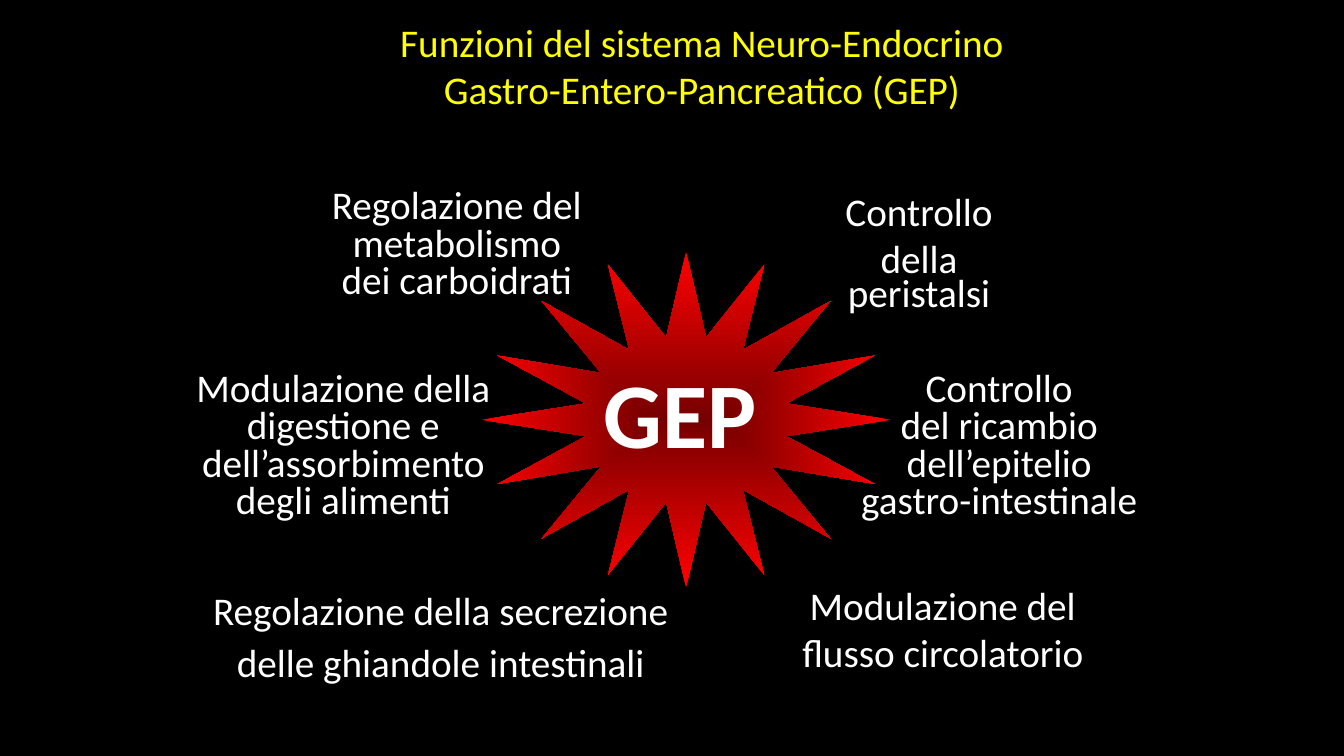
from dataclasses import dataclass

from pptx import Presentation
from pptx.dml.color import RGBColor
from pptx.enum.shapes import MSO_SHAPE
from pptx.enum.text import MSO_AUTO_SIZE, PP_ALIGN
from pptx.oxml import parse_xml
from pptx.oxml.ns import nsdecls, qn
from pptx.util import Inches, Pt


@dataclass(frozen=True)
class Theme:
    font: str = "Calibri"
    back: str = "000000"
    text: str = "FFFFFF"
    title: str = "FFFF00"
    core: str = "760000"
    edge: str = "FF0000"
    body: int = 28
    hub: int = 66


THEME = Theme()


def color(code):
    return RGBColor.from_string(code)


def add_text(slide, box, text, size=THEME.body, ink=THEME.text,
             bold=False, wrap=False, fill=None, gaps=None):
    """Centred text, one paragraph per line; gaps gives line spacings."""
    shape = slide.shapes.add_textbox(*map(Inches, box))
    if fill:
        shape.fill.solid()
        shape.fill.fore_color.rgb = color(fill)
    frame = shape.text_frame
    frame.word_wrap = wrap
    frame.auto_size = MSO_AUTO_SIZE.SHAPE_TO_FIT_TEXT
    frame.text = text
    for i, para in enumerate(frame.paragraphs):
        para.alignment = PP_ALIGN.CENTER
        if gaps:
            para.line_spacing = gaps[min(i, len(gaps) - 1)]
        font = para.runs[0].font
        font.name, font.size, font.bold = THEME.font, Pt(size), bold
        font.color.rgb = color(ink)


def add_title(slide, box):
    add_text(slide, box,
             "Funzioni del sistema Neuro-Endocrino\n"
             "Gastro-Entero-Pancreatico (GEP)",
             ink=THEME.title, wrap=True, fill=THEME.back)


def add_star(slide, box):
    star = slide.shapes.add_shape(MSO_SHAPE.STAR_16_POINT, *map(Inches, box))
    star.shadow.inherit = False
    star.adjustments[0] = 0.25
    star.line.fill.background()
    # Gradient from the centre out
    star.fill.gradient()
    for stop, code in zip(star.fill.gradient_stops, (THEME.core, THEME.edge)):
        stop.color.rgb = color(code)
    grad = star._element.spPr.find(qn("a:gradFill"))
    grad.remove(grad.find(qn("a:lin")))
    grad.append(parse_xml(
        f'<a:path {nsdecls("a")} path="shape"><a:fillToRect '
        'l="50000" t="50000" r="50000" b="50000"/></a:path>'))


def add_hub(slide, box):
    left, top, width, height = box
    add_text(slide, (left + 1.1, top + 0.98, 1.74, 1.21), "GEP",
             size=THEME.hub, bold=True)


def add_roles(slide, box):
    """The six functions around the star: offset and size, text, format."""
    tight = {"gaps": (0.8,)}
    roles = [
        ((1.34, 0.02, 2.72, 1.25),
         "Regolazione del\nmetabolismo\ndei carboidrati", tight),
        ((6.44, 0, 1.69, 1.4),
         "Controllo\ndella\nperistalsi", {"gaps": (1.0, 1.0, 0.7)}),
        ((6.33, 1.83, 3.5, 1.61),
         "Controllo\ndel ricambio\ndell’epitelio\ngastro-intestinale",
         {"wrap": True, **tight}),
        ((6.01, 3.91, 3.02, 1.04),
         "Modulazione del\nflusso circolatorio", {}),
        ((0, 1.83, 3.15, 1.61),
         "Modulazione della\ndigestione e\ndell’assorbimento\ndegli alimenti",
         tight),
        ((0.16, 3.91, 4.76, 1.14),
         "Regolazione della secrezione\ndelle ghiandole intestinali",
         {"gaps": (1.1,)}),
    ]
    for (dx, dy, width, height), text, style in roles:
        place = (box[0] + dx, box[1] + dy, width, height)
        add_text(slide, place, text, **style)


def main():
    deck = Presentation()
    deck.slide_width, deck.slide_height = Inches(13.33), Inches(7.5)
    slide = deck.slides.add_slide(deck.slide_layouts[6])
    slide.background.fill.solid()
    slide.background.fill.fore_color.rgb = color(THEME.back)

    # Title, star, functions, then the star's label on top
    center = (4.78, 2.5, 4.05, 3.33)
    add_title(slide, (2.57, 0.13, 8.78, 1.04))
    add_star(slide, center)
    add_roles(slide, (1.83, 1.81, 9.83, 5.05))
    add_hub(slide, center)
    deck.save("out.pptx")


if __name__ == "__main__":
    main()
